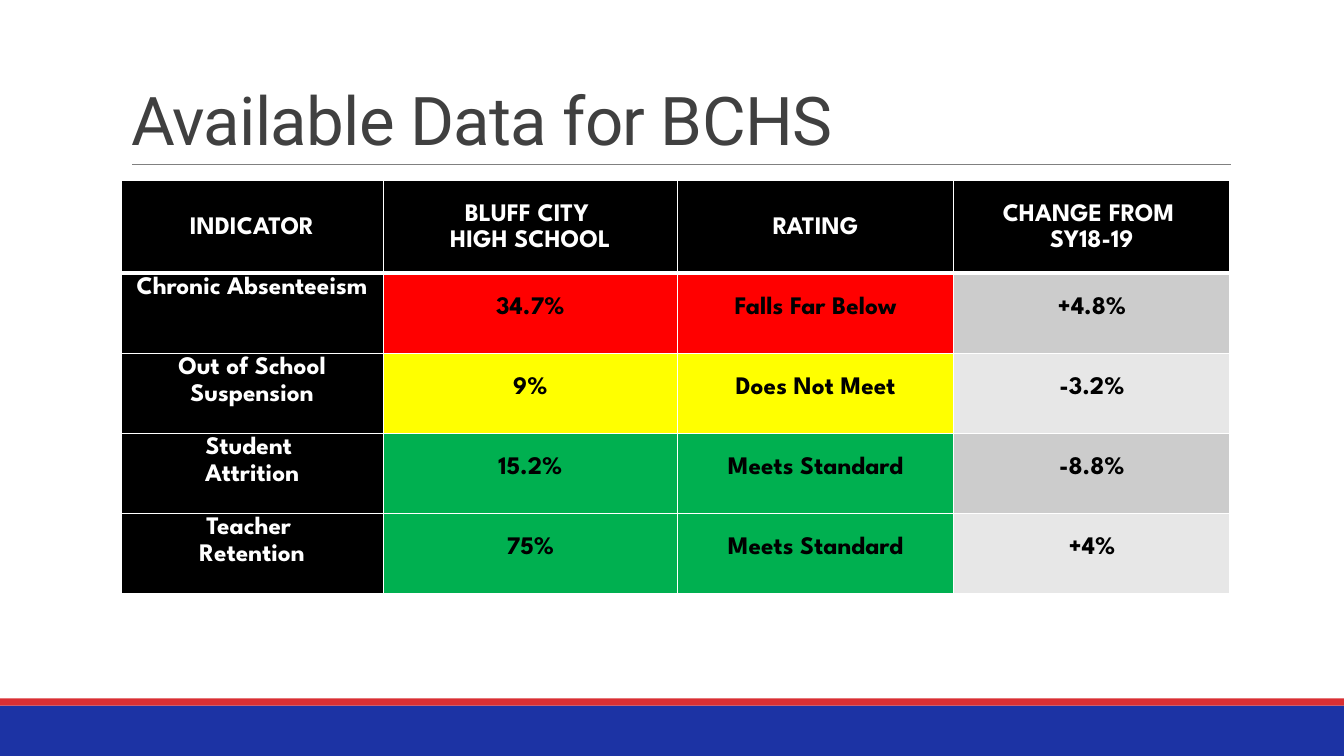
from dataclasses import dataclass

from lxml.etree import SubElement
from pptx import Presentation
from pptx.dml.color import RGBColor
from pptx.enum.shapes import MSO_CONNECTOR, MSO_SHAPE
from pptx.enum.text import MSO_ANCHOR, MSO_AUTO_SIZE, PP_ALIGN
from pptx.oxml.ns import qn
from pptx.util import Inches, Pt


@dataclass(frozen=True)
class Theme:
    title_font: str = "Roboto"
    table_font: str = "League Spartan"
    title_size: int = 48
    table_size: int = 18
    title: str = "404040"
    rule: str = "808080"
    blue: str = "1C33A4"
    red_strip: str = "D92F33"
    black: str = "000000"
    white: str = "FFFFFF"
    below: str = "FF0000"
    partial: str = "FFFF00"
    meets: str = "00B050"
    bands: tuple = ("CCCCCC", "E7E7E7")


theme = Theme()


def style_text(para, font, size, color, bold, spacing):
    para.font.name, para.font.size, para.font.bold = font, Pt(size), bold
    para.font.color.rgb = RGBColor.from_string(color)
    para.line_spacing = spacing


def draw_border(cell, side, width):
    line = SubElement(cell._tc.get_or_add_tcPr(), qn(f"a:{side}"), w=str(Pt(width)))
    fill = SubElement(line, qn("a:solidFill"))
    SubElement(fill, qn("a:srgbClr"), val=theme.white)


deck = Presentation()
deck.slide_width, deck.slide_height = Inches(13.33), Inches(7.5)
page = deck.slides.add_slide(deck.slide_layouts.get_by_name("Title Only"))
left, width = Inches(1.2), Inches(11)

# Footer bands
for top, height, color in ((7, 0.5, theme.blue), (6.93, 0.07, theme.red_strip)):
    band = page.shapes.add_shape(
        MSO_SHAPE.RECTANGLE, 0, Inches(top), deck.slide_width, Inches(height))
    band.shadow.inherit = False
    band.fill.solid()
    band.fill.fore_color.rgb = RGBColor.from_string(color)
    band.line.fill.background()

# Title and the rule beneath it
title = page.shapes.title
title.left, title.top, title.width, title.height = left, Inches(0.04), width, Inches(1.59)
frame = title.text_frame
frame.text = "Available Data for BCHS"
frame.vertical_anchor = MSO_ANCHOR.BOTTOM
frame.auto_size = MSO_AUTO_SIZE.NONE
heading = frame.paragraphs[0]
heading.alignment = PP_ALIGN.LEFT
style_text(heading, theme.title_font, theme.title_size, theme.title, False, 0.85)
heading.runs[0]._r.get_or_add_rPr().set("spc", "-50")

rule = page.shapes.add_connector(
    MSO_CONNECTOR.STRAIGHT, Inches(1.31), Inches(1.63), Inches(12.21), Inches(1.63))
rule.line.color.rgb = RGBColor.from_string(theme.rule)
rule.line.width = Pt(0.5)
SubElement(rule._element.spPr, qn("a:effectLst"))

# Indicator table
headers = ("INDICATOR", "BLUFF CITY \nHIGH SCHOOL", "RATING", "CHANGE FROM \nSY18-19")
indicators = (
    ("Chronic Absenteeism", "34.7%", "Falls Far Below", "+4.8%"),
    ("Out of School Suspension", "9%", "Does Not Meet", "-3.2%"),
    ("Student \nAttrition", "15.2%", "Meets Standard", "-8.8%"),
    ("Teacher \nRetention", "75%", "Meets Standard", "+4%"),
)
rating_colors = {
    "Falls Far Below": theme.below,
    "Does Not Meet": theme.partial,
    "Meets Standard": theme.meets,
}
rows = (headers, *indicators)
column_widths = (2.6, 2.92, 2.74, 2.74)
row_heights = (0.92,) + (0.795,) * len(indicators)

table = page.shapes.add_table(
    len(rows), len(headers), left, Inches(1.79), width, Inches(sum(row_heights))).table
table.first_row = table.horz_banding = False
for column, column_width in zip(table.columns, column_widths):
    column.width = Inches(column_width)

for row_index, values in enumerate(rows):
    table.rows[row_index].height = Inches(row_heights[row_index])
    for column_index, value in enumerate(values):
        cell = table.cell(row_index, column_index)
        is_label = row_index == 0 or column_index == 0
        if is_label:
            fill_color = theme.black
        elif column_index == 3:
            fill_color = theme.bands[(row_index - 1) % 2]
        else:
            fill_color = rating_colors[values[2]]

        # The line under the header row is heavier than the rest
        heavy_side = {0: "lnB", 1: "lnT"}.get(row_index)
        for side in ("lnL", "lnR", "lnT", "lnB"):
            draw_border(cell, side, 3 if side == heavy_side else 1)
        cell.fill.solid()
        cell.fill.fore_color.rgb = RGBColor.from_string(fill_color)

        cell.margin_left = cell.margin_right = Inches(0.07)
        cell.margin_top = cell.margin_bottom = 0
        cell.vertical_anchor = MSO_ANCHOR.MIDDLE if row_index == 0 else MSO_ANCHOR.TOP
        cell.text = value
        for para in cell.text_frame.paragraphs:
            para.alignment = PP_ALIGN.CENTER
            style_text(para, theme.table_font, theme.table_size,
                       theme.white if is_label else theme.black, True,
                       1.15 if is_label else 2.0)

deck.save("out.pptx")
